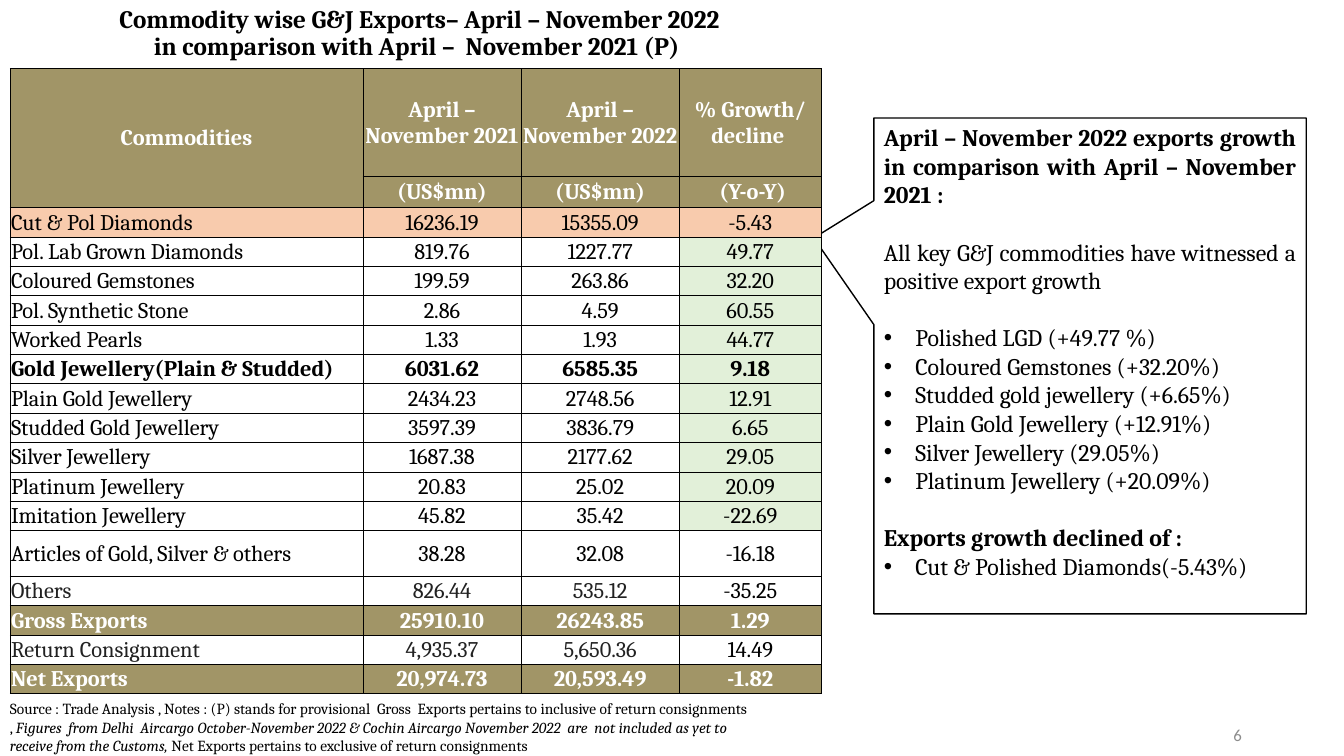
from dataclasses import dataclass
from typing import Any

from lxml import etree
from pptx import Presentation
from pptx.dml.color import RGBColor
from pptx.enum import shapes, text
from pptx.oxml import ns
from pptx.util import Pt

BLACK, WHITE, GREY, INK = "000000", "FFFFFF", "8C8C8C", "222222"
OLIVE, PEACH, GREEN = "A19567", "F8CBAD", "E2F0D9"
LEFT, CENTER = text.PP_ALIGN.LEFT, text.PP_ALIGN.CENTER
RIGHT, JUSTIFY = text.PP_ALIGN.RIGHT, text.PP_ALIGN.JUSTIFY
TOP, MIDDLE = text.MSO_ANCHOR.TOP, text.MSO_ANCHOR.MIDDLE


@dataclass
class Span:
    words: str
    bold: bool = False
    italic: bool = False


@dataclass
class Para:
    spans: list[Span]
    align: Any = LEFT
    before: float = 0
    bullet: bool = False
    spacing: float = 1.0


@dataclass
class Row:
    """One table line with its look; the last cell may differ."""
    cells: tuple[str, ...]
    fill: str = WHITE
    last_fill: str = WHITE
    color: str = BLACK
    last_color: str = BLACK
    bold: bool = False
    height: float = 21


def set_all(target: Any, values: dict[str, Any]) -> None:
    for name, value in values.items():
        setattr(target, name, value)


def paint(fill: Any, color: str) -> None:
    fill.solid()
    fill.fore_color.rgb = RGBColor.from_string(color)


def write(frame: Any, paras: list[Para], size: float, color: str = BLACK,
          font: str = "Cambria") -> None:
    for index, item in enumerate(paras):
        para = frame.paragraphs[0] if index == 0 else frame.add_paragraph()
        set_all(para, {"alignment": item.align, "line_spacing": item.spacing,
                       "space_before": Pt(item.before), "space_after": Pt(0)})
        for part in item.spans:
            span = para.add_run()
            span.text = part.words
            set_all(span.font, {"name": font, "size": Pt(size),
                                "bold": part.bold, "italic": part.italic})
            paint(span.font.fill, color)
        if item.bullet:
            add_bullet(para)


def add_bullet(para: Any) -> None:
    props = para._p.get_or_add_pPr()
    props.set("marL", str(Pt(22.5)))
    props.set("indent", str(-Pt(22.5)))
    etree.SubElement(props, ns.qn("a:buFont")).set("typeface", "Arial")
    etree.SubElement(props, ns.qn("a:buChar")).set("char", "•")


def place(box: Any, left: float, top: float, width: float, height: float,
          anchor: Any = TOP) -> Any:
    set_all(box, {"left": Pt(left), "top": Pt(top),
                  "width": Pt(width), "height": Pt(height)})
    frame = box.text_frame
    set_all(frame, {"word_wrap": True, "vertical_anchor": anchor,
                    "auto_size": text.MSO_AUTO_SIZE.NONE,
                    "margin_left": Pt(7.2), "margin_right": Pt(7.2),
                    "margin_top": Pt(3.6), "margin_bottom": Pt(3.6)})
    return frame


def add_borders(cell: Any) -> None:
    props = cell._tc.get_or_add_tcPr()
    for side in ("a:lnL", "a:lnR", "a:lnT", "a:lnB"):
        line = etree.SubElement(props, ns.qn(side), w=str(Pt(0.5)))
        solid = etree.SubElement(line, ns.qn("a:solidFill"))
        etree.SubElement(solid, ns.qn("a:srgbClr"), val=BLACK)


def header(cells: tuple[str, ...], height: float) -> Row:
    return Row(cells, OLIVE, OLIVE, WHITE, WHITE, True, height)


def growth(*cells: str, bold: bool = False) -> Row:
    return Row(cells, last_fill=GREEN, bold=bold)


COLUMNS = (252, 113, 113, 101.5)
ROWS = [
    header(("Commodities", "April – November 2021", "April – November 2022",
            "% Growth/ decline "), 77),
    header(("", "(US$mn)", "(US$mn)", " (Y-o-Y)"), 22.3),
    Row(("Cut & Pol Diamonds", "16236.19", "15355.09", "-5.43"), PEACH, PEACH),
    growth("Pol. Lab Grown Diamonds", "819.76", "1227.77", "49.77"),
    growth("Coloured Gemstones", "199.59", "263.86", "32.20"),
    growth("Pol. Synthetic Stone", "2.86", "4.59", "60.55"),
    growth("Worked Pearls", "1.33", "1.93", "44.77"),
    growth("Gold Jewellery(Plain & Studded)", "6031.62", "6585.35", "9.18", bold=True),
    growth("Plain Gold Jewellery", "2434.23", "2748.56", "12.91"),
    growth("Studded Gold Jewellery", "3597.39", "3836.79", "6.65"),
    growth("Silver Jewellery", "1687.38", "2177.62", "29.05"),
    growth("Platinum Jewellery", "20.83", "25.02", "20.09"),
    growth("Imitation Jewellery", "45.82", "35.42", "-22.69"),
    Row(("Articles of Gold, Silver & others", "38.28", "32.08", "-16.18"), height=32.6),
    Row(("Others", "826.44", "535.12", "-35.25"), color=INK),
    header(("Gross Exports", "25910.10", "26243.85", "1.29"), 21),
    Row(("Return Consignment", "4,935.37", "5,650.36", "14.49"), color=INK),
    header(("Net Exports", "20,974.73", "20,593.49", "-1.82"), 21),
]
HEADER_ROWS = 2
RISERS = ["Polished LGD (+49.77 %)", "Coloured Gemstones (+32.20%)",
          "Studded gold jewellery (+6.65%)", "Plain Gold Jewellery (+12.91%)",
          "Silver Jewellery (29.05%)", "Platinum Jewellery (+20.09%)"]
GAP = 20.4


def add_exports_table(page: Any) -> None:
    table = page.shapes.add_table(
        len(ROWS), len(COLUMNS), Pt(7.2), Pt(49), Pt(sum(COLUMNS)),
        Pt(sum(row.height for row in ROWS))).table
    set_all(table, {"first_row": False, "horz_banding": False})
    for column, width in zip(table.columns, COLUMNS):
        column.width = Pt(width)
    for r, row in enumerate(ROWS):
        table.rows[r].height = Pt(row.height)
        for c, words in enumerate(row.cells):
            last = c == len(COLUMNS) - 1
            cell = table.cell(r, c)
            set_all(cell, {"vertical_anchor": MIDDLE, "margin_left": Pt(0.7),
                           "margin_right": Pt(0.7), "margin_top": Pt(0.7),
                           "margin_bottom": 0})
            add_borders(cell)
            paint(cell.fill, row.last_fill if last else row.fill)
            align = LEFT if c == 0 and r >= HEADER_ROWS else CENTER
            if words:
                write(cell.text_frame, [Para([Span(words, row.bold)], align)], 16,
                      row.last_color if last else row.color)
    table.cell(0, 0).merge(table.cell(1, 0))


def add_callout(page: Any) -> None:
    box = page.shapes.add_shape(shapes.MSO_SHAPE.RECTANGULAR_CALLOUT, 0, 0, 0, 0)
    frame = place(box, 624.2, 84.3, 308.9, 354.2)
    box.adjustments[0], box.adjustments[1] = -0.639, -0.258
    box.shadow.inherit = False
    paint(box.fill, WHITE)
    paint(box.line.fill, BLACK)
    box.line.width = Pt(1)
    write(frame, [
        Para([Span("April – November 2022 exports growth in comparison with "
                   "April – November 2021 :", bold=True)], JUSTIFY),
        Para([Span("All key G&J commodities have witnessed a positive export growth ")],
             JUSTIFY, GAP),
        *(Para([Span(words)], before=0 if i else GAP, bullet=True)
          for i, words in enumerate(RISERS)),
        Para([Span("Exports growth declined of :", bold=True)], JUSTIFY, GAP),
        Para([Span("Cut & Polished Diamonds(-5.43%)")], JUSTIFY, bullet=True),
    ], 17)


def main() -> None:
    deck = Presentation()
    set_all(deck, {"slide_width": Pt(960), "slide_height": Pt(540)})
    page = deck.slides.add_slide(deck.slide_layouts[5])

    # Title
    lines = (" Commodity wise G&J Exports– April – November 2022",
             "in comparison with April –  November 2021 (P)")
    write(place(page.shapes.title, 15.1, 1.4, 565.2, 47.5),
          [Para([Span(line, bold=True)], CENTER, spacing=0.9) for line in lines], 18)

    # Page number
    number = page.shapes.add_textbox(0, 0, 0, 0)
    write(place(number, 678.2, 510.5, 216, 28.8, MIDDLE),
          [Para([Span("6")], RIGHT)], 12, GREY, "Calibri")

    # Callout, source note and table
    add_callout(page)
    note = page.shapes.add_textbox(0, 0, 0, 0)
    write(place(note, 0, 496.1, 542.9, 47.5), [Para([
        Span("Source : Trade Analysis , Notes : (P) stands for provisional  Gross  "
             "Exports pertains to inclusive of return consignments , "),
        Span("Figures  from Delhi  Aircargo October-November 2022 & Cochin Aircargo "
             "November 2022  are  not included as yet to receive from the Customs, ",
             italic=True),
        Span("Net Exports pertains to exclusive of return consignments")])], 11)
    add_exports_table(page)
    deck.save("out.pptx")


if __name__ == "__main__":
    main()
